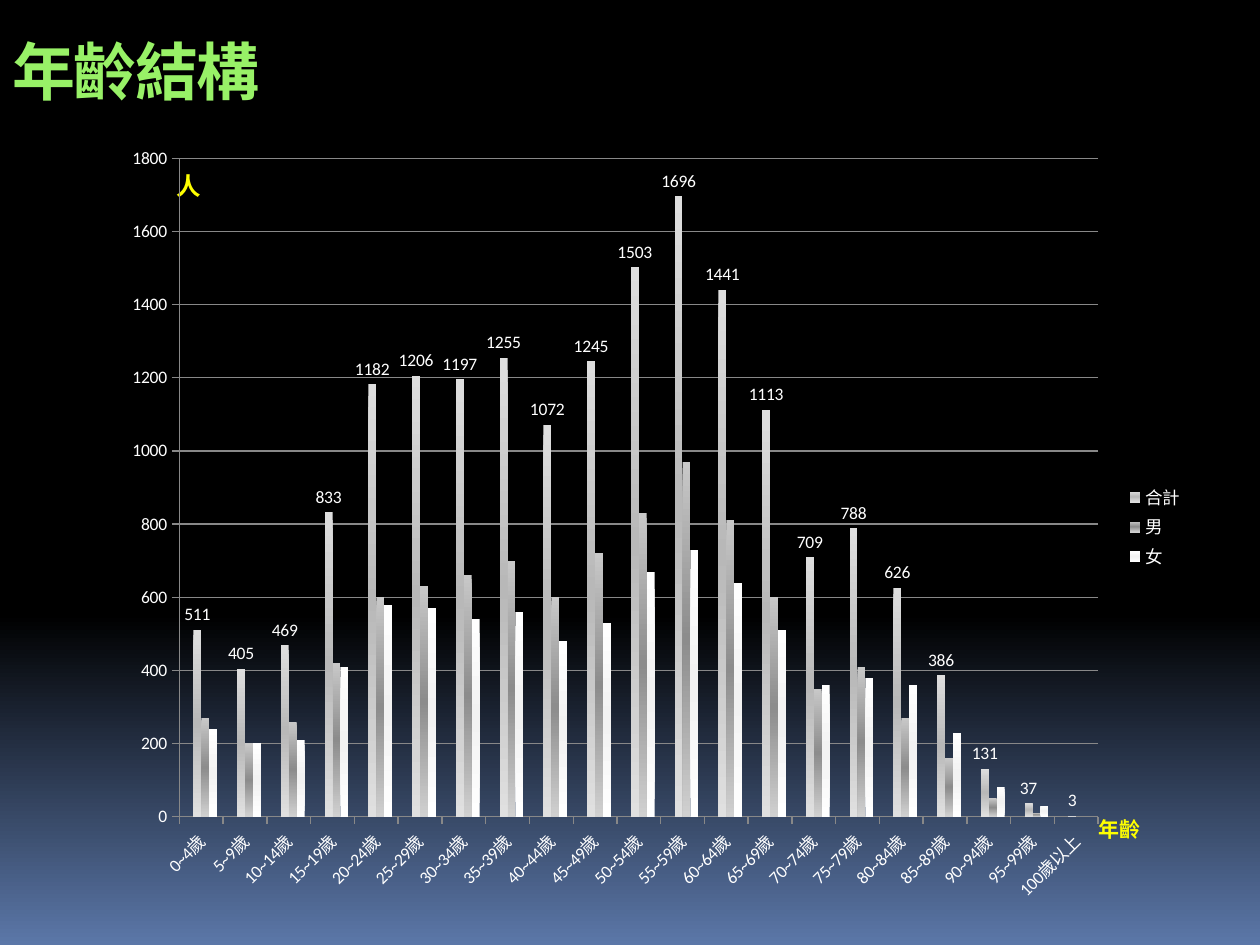
"""Build the age structure slide with a clustered column chart."""
from lxml.etree import SubElement
from pptx import Presentation
from pptx.chart.data import CategoryChartData
from pptx.dml.color import RGBColor
from pptx.enum.chart import XL_CHART_TYPE as ChartType
from pptx.enum.chart import XL_LABEL_POSITION as LabelPosition
from pptx.enum.chart import XL_LEGEND_POSITION as LegendPosition
from pptx.enum.chart import XL_TICK_MARK as TickMark
from pptx.enum.text import MSO_ANCHOR as Anchor
from pptx.enum.text import PP_ALIGN as Align
from pptx.oxml.ns import qn
from pptx.util import Cm, Pt

TITLE = "年齡結構"
TITLE_BOX = (0, 0.53, 21.59, 3.18)
AXIS_NAMES = [
    ("人", (3.3, 3.33, 0.99, 0.86), 14),
    ("年齡", (21.89, 16.33, 1.6, 0.76), 12),
]
CHART_BOX = (2.31, 2.72, 21.79, 15.8)
PLOT_AREA = {"x": 0.06, "y": 0.03, "w": 0.85, "h": 0.84}
CATEGORIES = [f"{age}~{age + 4}歲" for age in range(0, 100, 5)] + ["100歲以上"]
SERIES = {
    "Series 1": [0] * 20 + [None],
    "合計": [511, 405, 469, 833, 1182, 1206, 1197, 1255, 1072, 1245, 1503,
           1696, 1441, 1113, 709, 788, 626, 386, 131, 37, 3],
    "男": [270, 200, 260, 420, 600, 630, 660, 700, 600, 720, 830,
          970, 810, 600, 350, 410, 270, 160, 50, 10, 0],
    "女": [240, 200, 210, 410, 580, 570, 540, 560, 480, 530, 670,
          730, 640, 510, 360, 380, 360, 230, 80, 30, 0],
}
THEME = {
    "title": "98F167", "axis_name": "FFFF00", "chart_text": "FFFFFF", "line": "888888",
    "title_size": 36, "chart_size": 10,
    "title_font": "Courier New", "axis_font": "Arial", "chart_font": "Calibri",
    "background": [(0, "000000"), (65, "000000"), (100, "5B77A8")],
    "bars": {
        "Series 1": [(0, "7FD13B"), (100, "7FD13B")],
        "合計": [(0, "DEDEDE"), (50, "B8B8B8"), (100, "E0E0E0")],
        "男": [(0, "C8C8C8"), (50, "8C8C8C"), (100, "D0D0D0")],
        "女": [(0, "FFFFFF"), (50, "F2F2F2"), (100, "FFFFFF")],
    },
}


def style_font(font, name, size, color, bold=False):
    font.name, font.size, font.bold = name, Pt(size), bold
    font.color.rgb = RGBColor.from_string(color)


def write_text(shape, text, *, font, size, color, align=Align.LEFT, spacing=None):
    frame = shape.text_frame
    frame.word_wrap = True
    frame.vertical_anchor = Anchor.TOP
    paragraph = frame.paragraphs[0]
    paragraph.alignment = align
    run = paragraph.add_run()
    run.text = text
    style_font(run.font, font, size, color, bold=True)
    if spacing is not None:
        run.font._element.set("spc", str(spacing * 100))


def set_gradient(fill, element, stops):
    fill.gradient()
    fill.gradient_angle = 270
    stop_list = element.find(".//" + qn("a:gsLst"))
    for stop in list(stop_list):
        stop_list.remove(stop)
    for position, color in stops:
        stop = SubElement(stop_list, qn("a:gs"), pos=str(position * 1000))
        SubElement(stop, qn("a:srgbClr"), val=color)


def set_plot_area(chart):
    plot_area = chart._chartSpace.find(".//" + qn("c:plotArea"))
    layout = plot_area.find(qn("c:layout"))
    if layout is None:
        layout = SubElement(plot_area, qn("c:layout"))
        plot_area.insert(0, layout)
    manual = SubElement(layout, qn("c:manualLayout"))
    settings = {"layoutTarget": "inner", "xMode": "edge", "yMode": "edge", **PLOT_AREA}
    for tag, value in settings.items():
        SubElement(manual, qn(f"c:{tag}"), val=str(value))


def hide_legend_entry(legend, index):
    entry = SubElement(legend._element, qn("c:legendEntry"))
    SubElement(entry, qn("c:idx"), val=str(index))
    SubElement(entry, qn("c:delete"), val="1")
    legend._element.find(qn("c:legendPos")).addnext(entry)


def add_age_chart(slide):
    data = CategoryChartData()
    data.categories = CATEGORIES
    for name, values in SERIES.items():
        data.add_series(name, values)
    chart = slide.shapes.add_chart(
        ChartType.COLUMN_CLUSTERED, *map(Cm, CHART_BOX), data).chart
    chart.has_title = False
    style_font(chart.font, THEME["chart_font"], THEME["chart_size"], THEME["chart_text"])
    set_plot_area(chart)

    chart.has_legend = True
    chart.legend.position = LegendPosition.RIGHT
    chart.legend.include_in_layout = False
    hide_legend_entry(chart.legend, 0)

    line_color = RGBColor.from_string(THEME["line"])
    categories, values = chart.category_axis, chart.value_axis
    values.minimum_scale, values.maximum_scale, values.major_unit = 0, 1800, 200
    values.has_major_gridlines = True
    for axis in (categories, values):
        axis.major_tick_mark = TickMark.OUTSIDE
        axis.format.line.color.rgb = line_color
        style_font(axis.tick_labels.font, THEME["chart_font"],
                   THEME["chart_size"], THEME["chart_text"])
    values.major_gridlines.format.line.color.rgb = line_color
    categories._element.find(".//" + qn("a:bodyPr")).set("rot", "-2700000")

    plot = chart.plots[0]
    plot.gap_width, plot.overlap, plot.vary_by_categories = 150, 0, False
    for series in plot.series:
        set_gradient(series.format.fill, series._element, THEME["bars"][series.name])
        series.invert_if_negative = False
    labels = plot.series[1].data_labels
    labels.show_value = True
    labels.position = LabelPosition.OUTSIDE_END
    style_font(labels.font, THEME["chart_font"], THEME["chart_size"], THEME["chart_text"])


def main():
    presentation = Presentation()
    presentation.slide_width, presentation.slide_height = Cm(25.4), Cm(19.05)
    slide = presentation.slides.add_slide(presentation.slide_layouts[5])
    set_gradient(slide.background.fill, slide.element, THEME["background"])

    title = slide.shapes.title
    title.left, title.top, title.width, title.height = map(Cm, TITLE_BOX)
    write_text(title, TITLE, font=THEME["title_font"], size=THEME["title_size"],
               color=THEME["title"], spacing=-1)
    for text, box, size in AXIS_NAMES:
        write_text(slide.shapes.add_textbox(*map(Cm, box)), text,
                   font=THEME["axis_font"], size=size, color=THEME["axis_name"])
    add_age_chart(slide)
    presentation.save("out.pptx")


if __name__ == "__main__":
    main()
